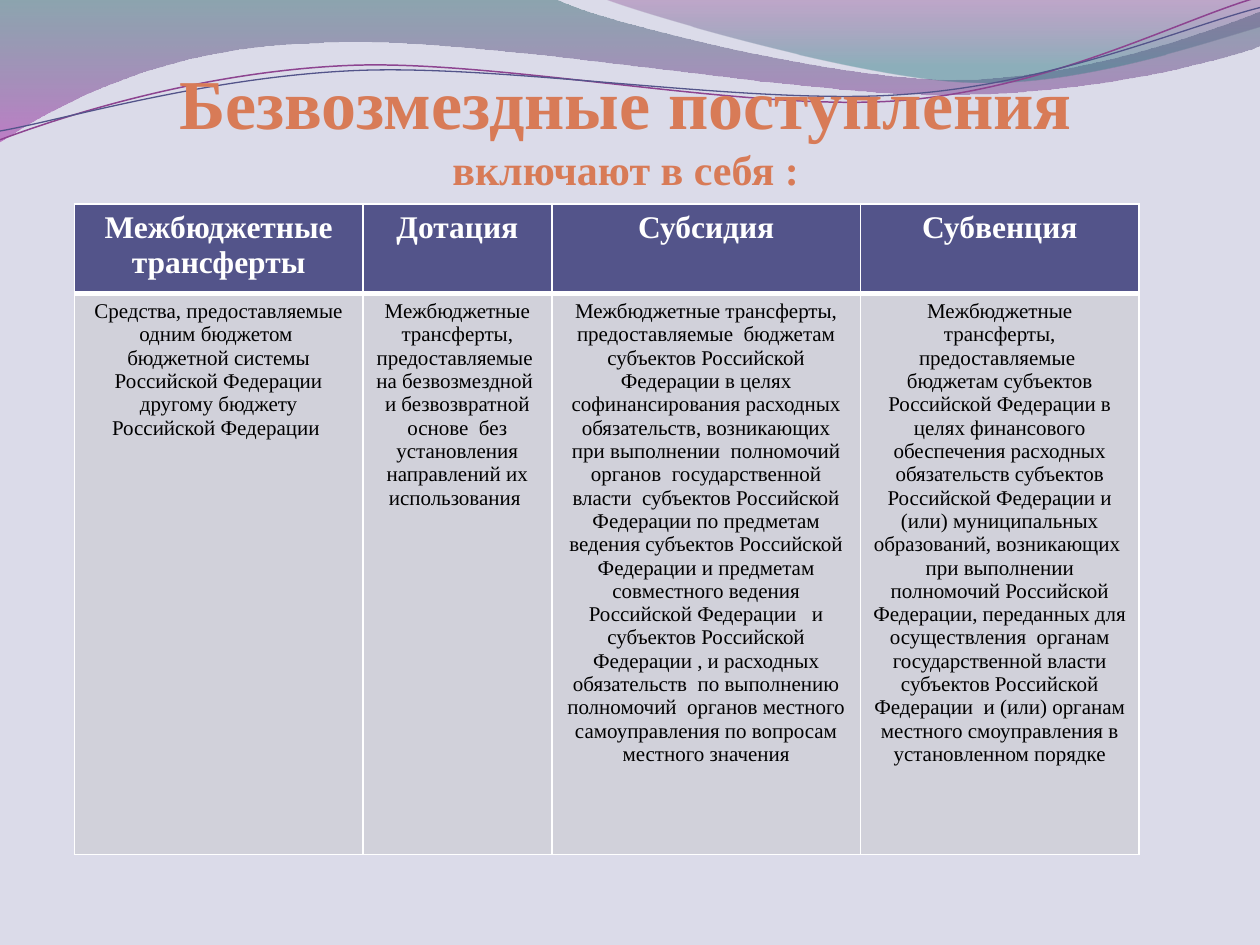
from lxml import etree
from pptx import Presentation
from pptx.dml.color import RGBColor
from pptx.enum.text import MSO_ANCHOR, PP_ALIGN
from pptx.oxml.ns import qn
from pptx.util import Inches, Pt

CENTER, BOTTOM, TOP = PP_ALIGN.CENTER, MSO_ANCHOR.BOTTOM, MSO_ANCHOR.TOP
TITLE_ONLY = 5
FONT = "Times New Roman"
INDIGO, PLUM, ORANGE = "53548A", "8D4490", "D87B57"
PALE, GREY, WHITE, BLACK = "DBDBE9", "D1D1DA", "FFFFFF", "000000"

# Wave outlines in tenths of the slide width: a start point, then
# segments of two numbers (straight) or six numbers (cubic curve).
LEFT_WAVE = [(0, 0), (4.4, -.01), (4.76, .17, 6.64, .63, 7.58, .63),
             (8.53, .63, 9.58, .26, 10, .09), (10.01, .36),
             (9.83, .44, 8.7, .76, 7.46, .75), (6.22, .75, 3.82, .28, 2.57, .34),
             (1.29, .36, .46, .83, -.01, 1.13), (0, 0)]
RIGHT_WAVE = [(4.79, -.01), (5.09, .11, 6.82, .62, 7.69, .65),
              (8.56, .69, 9.61, .32, 10, .21), (10, 0), (4.79, -.01)]
PLUM_LINE = [(0, 1.11), (.48, .93, 1.58, .57, 2.77, .52),
             (3.95, .47, 5.93, .89, 7.13, .8), (8.33, .71, 9.38, .15, 9.98, -.02)]
INDIGO_LINE = [(0, 1.04), (.47, .96, 1.64, .61, 2.83, .56),
               (4.03, .51, 5.97, .84, 7.17, .75), (8.36, .67, 9.41, .21, 10, .06)]

COLUMNS = [
    ("Межбюджетные трансферты", 2.29,
     "Средства, предоставляемые одним бюджетом  бюджетной системы Российской "
     "Федерации другому бюджету Российской Федерации "),
    ("Дотация", 1.5,
     "Межбюджетные трансферты, предоставляемые  на безвозмездной  и безвозвратной "
     "основе  без установления направлений их использования "),
    ("Субсидия", 2.45,
     "Межбюджетные трансферты, предоставляемые  бюджетам субъектов Российской "
     "Федерации в целях софинансирования расходных обязательств, возникающих при "
     "выполнении  полномочий органов  государственной власти  субъектов Российской "
     "Федерации по предметам ведения субъектов Российской Федерации и предметам "
     "совместного ведения Российской Федерации   и субъектов Российской Федерации , "
     "и расходных обязательств  по выполнению полномочий  органов местного "
     "самоуправления по вопросам местного значения"),
    ("Субвенция", 2.21,
     "Межбюджетные трансферты, предоставляемые  бюджетам субъектов Российской "
     "Федерации в целях финансового обеспечения расходных обязательств субъектов "
     "Российской Федерации и (или) муниципальных образований, возникающих  при "
     "выполнении полномочий Российской Федерации, переданных для осуществления  "
     "органам государственной власти субъектов Российской Федерации  и (или) органам "
     "местного смоуправления в установленном порядке"),
]


def rgb(value):
    return RGBColor.from_string(value)


def write(paragraph, text, size, color, bold=False):
    paragraph.alignment = CENTER
    run = paragraph.add_run()
    run.text = text
    run.font.name, run.font.size, run.font.bold = FONT, Pt(size), bold
    run.font.color.rgb = rgb(color)


def add_outline(slide, box, outline, close):
    """Build the outline from its end points, then bend the curved segments."""
    left, top, width, _ = box
    unit = width / 10

    def place(x, y):
        return round(left + x * unit), round(top + y * unit)

    builder = slide.shapes.build_freeform(*place(*outline[0]))
    builder.add_line_segments([place(*segment[-2:]) for segment in outline[1:]], close=close)
    shape = builder.convert_to_shape()
    shape.shadow.inherit = False
    straights = list(shape._element.iter(qn("a:lnTo")))
    for straight, segment in zip(straights, outline[1:]):
        if len(segment) == 2:
            continue
        straight.tag = qn("a:cubicBezTo")
        for index in (0, 2):
            x, y = place(*segment[index:index + 2])
            control = etree.Element(qn("a:pt"), x=str(x - shape.left), y=str(y - shape.top))
            straight.insert(index // 2, control)
    return shape


def add_wave(slide, box, outline, stops):
    """Stops are (position, colour, opacity percent), from top to bottom."""
    wave = add_outline(slide, box, outline, close=True)
    wave.line.fill.background()
    wave.fill.gradient()
    wave.fill.gradient_angle = 270
    for stop, (position, color, _) in zip(wave.fill.gradient_stops, stops):
        stop.position, stop.color.rgb = position, rgb(color)
    gradient = wave._element.spPr.find(qn("a:gradFill"))
    for color, (*_, opacity) in zip(gradient.iter(qn("a:srgbClr")), stops):
        etree.SubElement(color, qn("a:alpha")).set("val", str(opacity * 1000))


def add_thread(slide, box, outline, color, weight):
    thread = add_outline(slide, box, outline, close=False)
    thread.fill.background()
    thread.line.color.rgb, thread.line.width = rgb(color), Pt(weight)


def add_waves(slide, box):
    add_wave(slide, box, LEFT_WAVE, [(0, "2D6368", 45), (1, "A530A9", 55)])
    add_wave(slide, box, RIGHT_WAVE, [(0, "7F2F82", 30), (.8, "2F7B82", 45)])
    add_thread(slide, box, PLUM_LINE, PLUM, .85)
    add_thread(slide, box, INDIGO_LINE, INDIGO, .75)


def add_title(slide, box):
    title = slide.shapes.title
    title.left, title.top, title.width, title.height = box
    frame = title.text_frame
    frame.word_wrap, frame.vertical_anchor = True, BOTTOM
    frame.margin_left = frame.margin_right = frame.margin_top = frame.margin_bottom = 0
    heading = frame.paragraphs[0]
    write(heading, "Безвозмездные поступления ", 40, ORANGE, bold=True)
    write(heading, "включают в себя :", 24, ORANGE, bold=True)
    slide.shapes._spTree.append(title._element)  # in front of the waves


def set_borders(cell, **weights):
    properties = cell._tc.get_or_add_tcPr()
    for place, side in enumerate(("lnL", "lnR", "lnT", "lnB")):
        line = etree.Element(qn("a:" + side), w=str(Pt(weights.get(side, 1))))
        fill = etree.SubElement(line, qn("a:solidFill"))
        etree.SubElement(fill, qn("a:srgbClr"), val=WHITE)
        properties.insert(place, line)


def fill_cell(cell, text, fill, size, color, bold=False, **borders):
    cell.fill.solid()
    cell.fill.fore_color.rgb = rgb(fill)
    cell.vertical_anchor = TOP
    write(cell.text_frame.paragraphs[0], text, size, color, bold)
    set_borders(cell, **borders)


def add_transfers_table(slide, box):
    table = slide.shapes.add_table(2, len(COLUMNS), *box).table
    width, height = box[2:]
    total = sum(share for _, share, _ in COLUMNS)
    table.rows[0].height = round(height * .71 / 5.16)
    table.rows[1].height = height - table.rows[0].height
    for i, (heading, share, meaning) in enumerate(COLUMNS):
        table.columns[i].width = round(width * share / total)
        fill_cell(table.cell(0, i), heading, INDIGO, 18, WHITE, bold=True, lnB=3)
        fill_cell(table.cell(1, i), meaning, GREY, 12, BLACK, lnT=3)


def main():
    deck = Presentation()
    deck.slide_width, deck.slide_height = Inches(10), Inches(7.5)
    slide = deck.slides.add_slide(deck.slide_layouts[TITLE_ONLY])
    slide.background.fill.solid()
    slide.background.fill.fore_color.rgb = rgb(PALE)
    add_waves(slide, (0, 0, deck.slide_width, Inches(1.14)))
    add_title(slide, (Inches(.75), Inches(.44), Inches(8.43), Inches(1.1)))
    add_transfers_table(slide, (Inches(.59), Inches(1.62), Inches(8.45), Inches(5.16)))
    deck.save("out.pptx")


if __name__ == "__main__":
    main()
